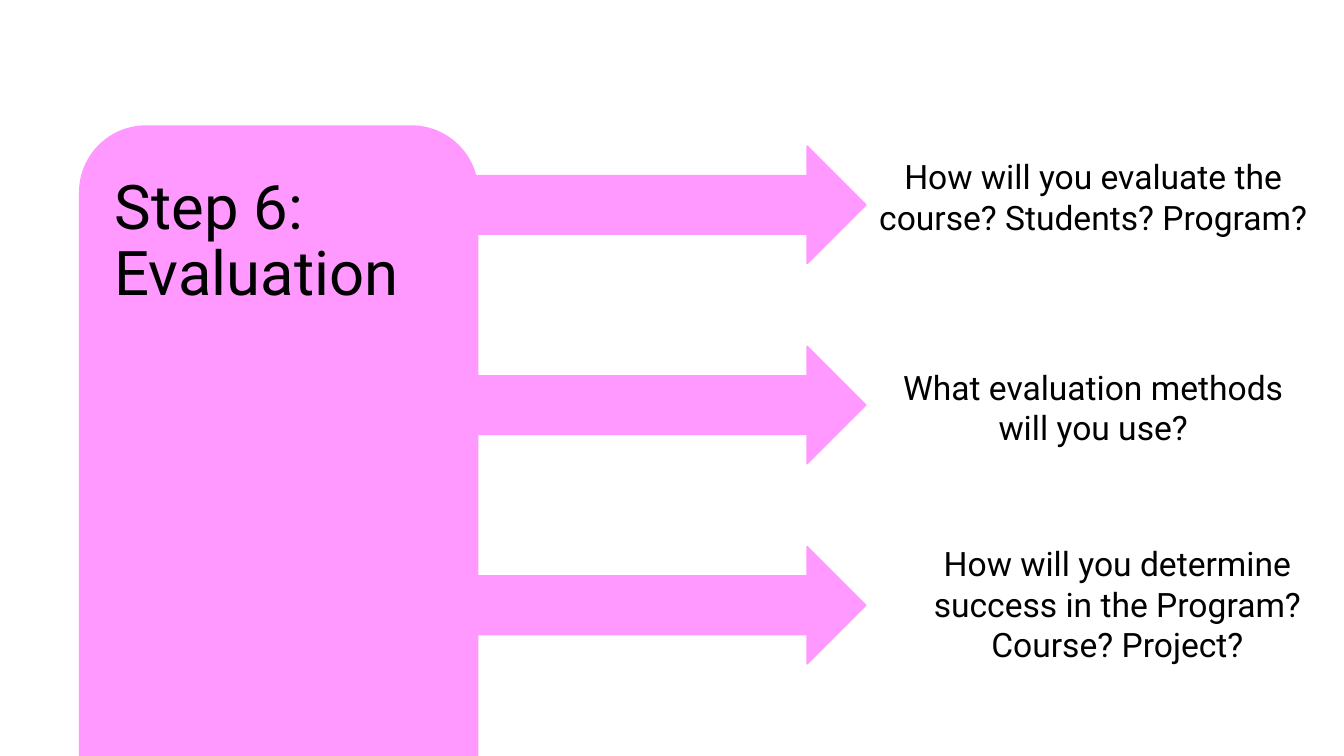
from pptx import Presentation
from pptx.dml.color import RGBColor
from pptx.enum.shapes import MSO_SHAPE
from pptx.enum.text import MSO_ANCHOR, MSO_AUTO_SIZE, PP_ALIGN
from pptx.util import Pt

PINK = RGBColor(0xFF, 0x99, 0xFF)
BLACK = RGBColor(0x00, 0x00, 0x00)
FONT = "Roboto"
ARROW_TOP = 104.4
ARROW_STEP = 143
QUESTIONS = [
    ("How will you evaluate the course? Students? Program?", 619.2, 108, 94.3),
    ("What evaluation methods will you use?", 619.2, 258.5, 65.5),
    ("How will you determine success in the Program? Course? Project?", 636.5, 384.5, 94.3),
]


def add_pink_shape(slide, kind, left, top, width, height):
    """Add a preset shape with pink fill and outline."""
    shape = slide.shapes.add_shape(kind, Pt(left), Pt(top), Pt(width), Pt(height))
    shape.shadow.inherit = False
    shape.fill.solid()
    shape.fill.fore_color.rgb = PINK
    shape.line.color.rgb = PINK
    shape.line.width = Pt(1)


def add_text(slide, text, left, top, width, height, size, align):
    """Add a wrapping text box and return it."""
    box = slide.shapes.add_textbox(Pt(left), Pt(top), Pt(width), Pt(height))
    frame = box.text_frame
    frame.word_wrap = True
    frame.text = text
    para = frame.paragraphs[0]
    para.alignment = align
    span = para.runs[0]
    span.font.name = FONT
    span.font.size = Pt(size)
    span.font.color.rgb = BLACK
    return box


def add_title(slide, text):
    """Add the large heading on the panel."""
    box = add_text(slide, text, 74.9, 121, 266.4, 104.4, 44, PP_ALIGN.LEFT)
    box.text_frame.vertical_anchor = MSO_ANCHOR.MIDDLE
    box.text_frame.paragraphs[0].line_spacing = 0.9


def add_question(slide, text, left, top, height):
    """Add a centred question beside its arrow."""
    box = add_text(slide, text, left, top, 323.3, height, 24, PP_ALIGN.CENTER)
    box.text_frame.auto_size = MSO_AUTO_SIZE.SHAPE_TO_FIT_TEXT


def main():
    """Build and save the evaluation slide."""
    deck = Presentation()
    deck.slide_width, deck.slide_height = Pt(960), Pt(540)
    slide = deck.slides.add_slide(deck.slide_layouts[6])
    add_pink_shape(slide, MSO_SHAPE.ROUNDED_RECTANGLE, 56.9, 90, 284.4, 540.7)
    add_title(slide, "Step 6: Evaluation")
    for index in range(len(QUESTIONS)):
        top = ARROW_TOP + index * ARROW_STEP
        add_pink_shape(slide, MSO_SHAPE.RIGHT_ARROW, 286.6, top, 331.9, 83.9)
    for text, left, top, height in QUESTIONS:
        add_question(slide, text, left, top, height)
    deck.save("out.pptx")


if __name__ == "__main__":
    main()
